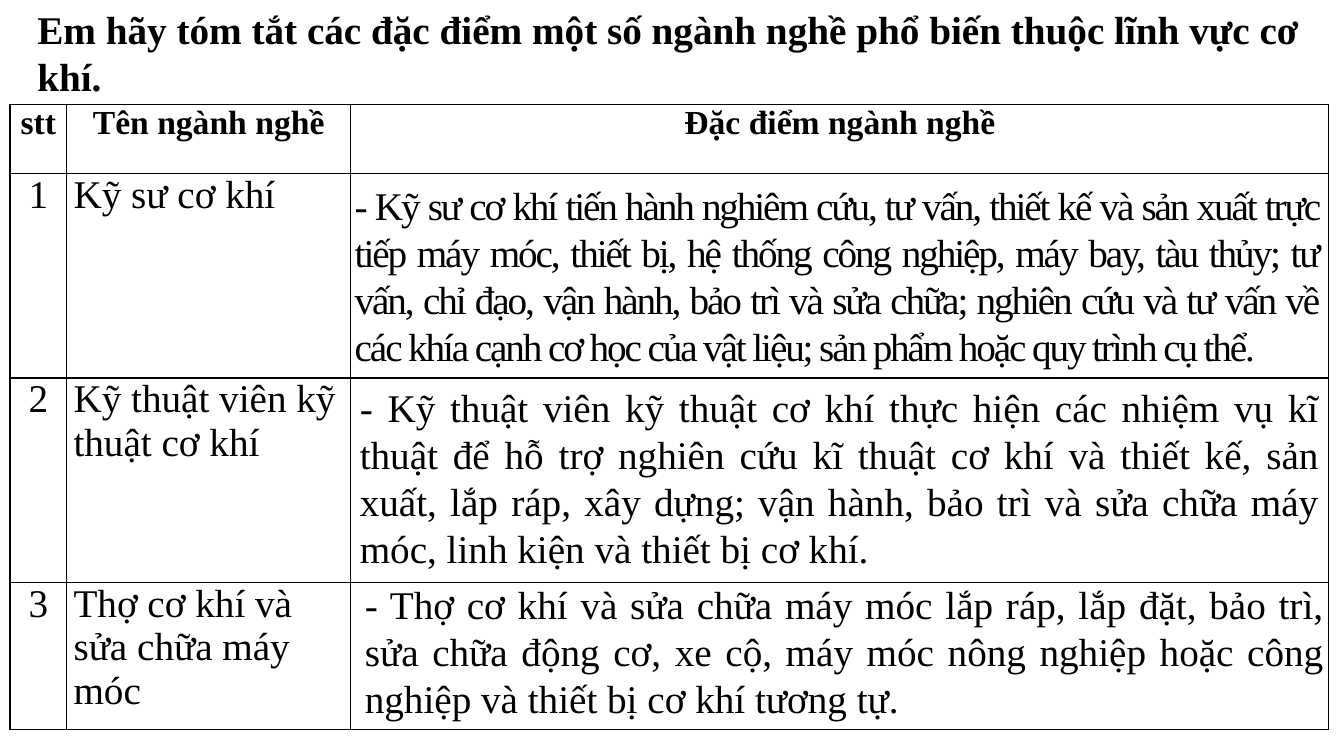
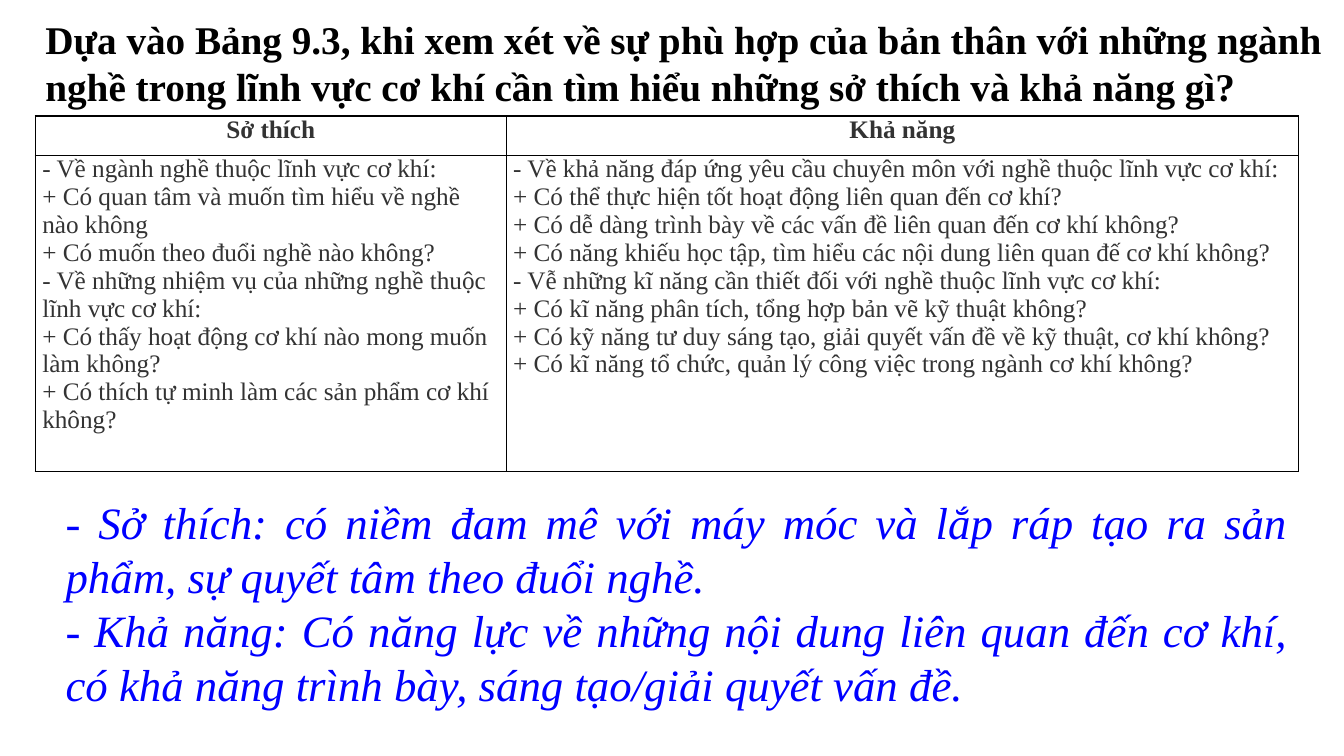
from pptx import Presentation
from pptx.dml.color import RGBColor
from pptx.enum import text as t
from pptx.oxml import parse_xml
from pptx.oxml.ns import nsdecls
from pptx.util import Inches, Pt

BLACK = RGBColor(0x00, 0x00, 0x00)
GRAY = RGBColor(0x33, 0x33, 0x33)
BLUE = RGBColor(0x00, 0x00, 0xFF)
FONT = "Times New Roman"
LEFT, MID, JUST = t.PP_ALIGN.LEFT, t.PP_ALIGN.CENTER, t.PP_ALIGN.JUSTIFY
TITLE_ONLY, TITLE_BODY = 5, 1


def write(frame, lines, size=28, color=BLACK, bold=False, italic=False,
          align=LEFT, track=None):
    """Fill a text frame with one paragraph per line."""
    if isinstance(lines, str):
        lines = [lines]
    for i, line in enumerate(lines):
        para = frame.paragraphs[0] if i == 0 else frame.add_paragraph()
        para.alignment = align
        para.space_before = Pt(0)
        run = para.add_run()
        run.text = line
        font = run.font
        font.name, font.size = FONT, Pt(size)
        font.bold, font.italic = bold, italic
        font.color.rgb = color
        if track is not None:
            run._r.get_or_add_rPr().set("spc", str(round(track * 100)))


class Deck:
    """Holds the shared style and the current slide."""

    def __init__(self):
        self.prs = Presentation()
        self.prs.slide_width = Inches(13.33)
        self.prs.slide_height = Inches(7.5)
        self.slide = None

    def page(self, layout):
        self.slide = self.prs.slides.add_slide(self.prs.slide_layouts[layout])

    def fit(self, shape, box):
        shape.left, shape.top, shape.width, shape.height = map(Inches, box)
        frame = shape.text_frame
        frame.word_wrap = True
        frame.auto_size = t.MSO_AUTO_SIZE.NONE
        frame.vertical_anchor = t.MSO_ANCHOR.TOP
        return frame

    def title(self, line, box):
        write(self.fit(self.slide.shapes.title, box), line, bold=True)

    def body(self, lines, box, **style):
        frame = self.fit(self.slide.placeholders[1], box)
        write(frame, lines, **style)
        # Plain paragraphs: no bullet, no hanging indent
        for para in frame.paragraphs:
            props = para._p.get_or_add_pPr()
            props.set("marL", "0")
            props.set("indent", "0")
            props.append(parse_xml(f"<a:buNone {nsdecls('a')}/>"))

    def note(self, line, box, **style):
        shape = self.slide.shapes.add_textbox(*map(Inches, box))
        write(self.fit(shape, box), line, align=JUST, **style)

    def table(self, left, top, cols, rows, cells, style):
        """Draw a ruled grid; style(row, col) gives each cell's text format."""
        grid = self.slide.shapes.add_table(
            len(rows), len(cols), Inches(left), Inches(top),
            Inches(sum(cols)), Inches(sum(rows))).table
        grid.first_row = grid.horz_banding = False
        for col, width in zip(grid.columns, cols):
            col.width = Inches(width)
        for row, height in zip(grid.rows, rows):
            row.height = Inches(height)
        for r, line in enumerate(cells):
            for c, words in enumerate(line):
                cell = grid.cell(r, c)
                self.rule(cell)
                cell.fill.background()
                cell.margin_left = cell.margin_right = Inches(0.07)
                cell.margin_top = cell.margin_bottom = 0
                if words:
                    write(cell.text_frame, words, **style(r, c))

    def rule(self, cell):
        props = cell._tc.get_or_add_tcPr()
        for side in "LRTB":
            props.append(parse_xml(
                f'<a:ln{side} {nsdecls("a")} w="{Pt(1)}"><a:solidFill>'
                f'<a:srgbClr val="{BLACK}"/></a:solidFill></a:ln{side}>'))


def trades(deck):
    deck.page(TITLE_ONLY)
    deck.title("Em hãy tóm tắt các đặc điểm một số ngành nghề phổ biến thuộc "
               "lĩnh vực cơ khí.", (0.27, 0, 12.8, 1.04))

    # Table of trades
    def style(r, c):
        if r == 0:
            return dict(size=24, bold=True, align=MID)
        return dict(align=LEFT if c else MID)

    deck.table(0.1, 1.04, (0.56, 2.82, 9.7), (0.68, 2.03, 2.03, 1.46), [
        ("stt", "Tên ngành nghề", "Đặc điểm ngành nghề"),
        ("1", "Kỹ sư cơ khí", ""),
        ("2", "Kỹ thuật viên kỹ thuật cơ khí", ""),
        ("3", "Thợ cơ khí và sửa chữa máy móc", ""),
    ], style)

    # Descriptions laid over the last column
    deck.note("- Kỹ sư cơ khí tiến hành nghiêm cứu, tư vấn, thiết kế và sản "
              "xuất trực tiếp máy móc, thiết bị, hệ thống công nghiệp, máy "
              "bay, tàu thủy; tư vấn, chỉ đạo, vận hành, bảo trì và sửa chữa; "
              "nghiên cứu và tư vấn về các khía cạnh cơ học của vật liệu; sản "
              "phẩm hoặc quy trình cụ thể.",
              (3.42, 1.75, 9.76, 1.99), track=-1.5)
    deck.note("- Kỹ thuật viên kỹ thuật cơ khí thực hiện các nhiệm vụ kĩ "
              "thuật để hỗ trợ nghiên cứu kĩ thuật cơ khí và thiết kế, sản "
              "xuất, lắp ráp, xây dựng; vận hành, bảo trì và sửa chữa máy "
              "móc, linh kiện và thiết bị cơ khí.",
              (3.47, 3.75, 9.71, 1.99))
    deck.note("- Thợ cơ khí và sửa chữa máy móc lắp ráp, lắp đặt, bảo trì, "
              "sửa chữa động cơ, xe cộ, máy móc nông nghiệp hoặc công nghiệp "
              "và thiết bị cơ khí tương tự.",
              (3.52, 5.71, 9.71, 1.51))


def skills(deck):
    deck.page(TITLE_BODY)
    deck.title("Dựa vào Bảng 9.3, khi xem xét về sự phù hợp của bản thân với "
               "những ngành nghề trong lĩnh vực cơ khí cần tìm hiểu những sở "
               "thích và khả năng gì?", (0.35, 0.1, 12.89, 1.04))

    # Table of interests and abilities
    likes = [
        "- Về ngành nghề thuộc lĩnh vực cơ khí:",
        "+ Có quan tâm và muốn tìm hiểu về nghề nào không",
        "+ Có muốn theo đuổi nghề nào không?",
        "- Về những nhiệm vụ của những nghề thuộc lĩnh vực cơ khí:",
        "+ Có thấy hoạt động cơ khí nào mong muốn làm không?",
        "+ Có thích tự minh làm các sản phẩm cơ khí không?",
    ]
    powers = [
        "- Về khả năng đáp ứng yêu cầu chuyên môn với nghề thuộc lĩnh vực cơ khí:",
        "+ Có thể thực hiện tốt hoạt động liên quan đến cơ khí?",
        "+ Có dễ dàng trình bày về các vấn đề liên quan đến cơ khí không?",
        "+ Có năng khiếu học tập, tìm hiểu các nội dung liên quan đế cơ khí không?",
        "- Vễ những kĩ năng cần thiết đối với nghề thuộc lĩnh vực cơ khí:",
        "+ Có kĩ năng phân tích, tổng hợp bản vẽ kỹ thuật không?",
        "+ Có kỹ năng tư duy sáng tạo, giải quyết vấn đề về kỹ thuật, cơ khí không?",
        "+ Có kĩ năng tổ chức, quản lý công việc trong ngành cơ khí không?",
    ]

    def style(r, c):
        return dict(size=18, color=GRAY, bold=r == 0,
                    align=LEFT if r else MID)

    deck.table(0.35, 1.15, (4.67, 7.86), (0.39, 3.14),
               [("Sở thích", "Khả năng"), (likes, powers)], style)

    # Answer
    deck.body([
        "- Sở thích: có niềm đam mê với máy móc và lắp ráp tạo ra sản phẩm, "
        "sự quyết tâm theo đuổi nghề.",
        "- Khả năng: Có năng lực về những nội dung liên quan đến cơ khí, có "
        "khả năng trình bày, sáng tạo/giải quyết vấn đề.",
    ], (0.55, 4.86, 12.33, 2.26), size=32, color=BLUE, italic=True, align=JUST)


def main():
    deck = Deck()
    trades(deck)
    skills(deck)
    deck.prs.save("out.pptx")


if __name__ == "__main__":
    main()
